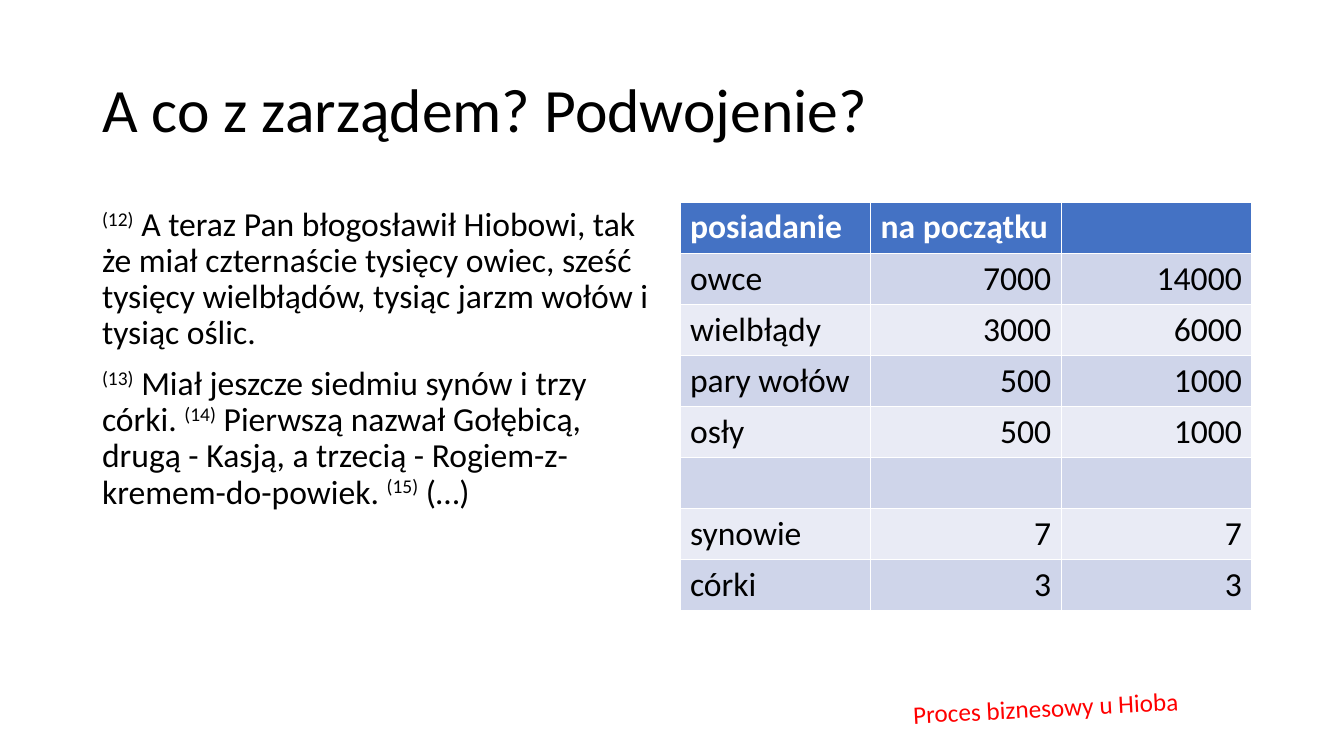
import pptx
import pptx.dml.color
import pptx.enum.text
import pptx.oxml
import pptx.oxml.ns
import pptx.util

EMU_PER_PX = 914400 / 100.8
FONT = "Calibri"
COLORS = {
    "text": "000000",
    "header_text": "FFFFFF",
    "header": "4472C4",
    "odd_row": "CFD5EA",
    "even_row": "E9EBF5",
    "label": "FF0000",
}
ALIGN = pptx.enum.text.PP_ALIGN

VERSES = [
    [("(12)", " A teraz Pan błogosławił Hiobowi, tak że miał czternaście tysięcy owiec, "
              "sześć tysięcy wielbłądów, tysiąc jarzm wołów i tysiąc oślic.")],
    [("(13)", " Miał jeszcze siedmiu synów i trzy córki. "),
     ("(14)", " Pierwszą nazwał Gołębicą, drugą - Kasją, a trzecią - Rogiem-z-kremem-do-powiek. "),
     ("(15)", " (…)")],
]
POSSESSIONS = [
    ("posiadanie", "na początku", ""),
    ("owce", "7000", "14000"),
    ("wielbłądy", "3000", "6000"),
    ("pary wołów", "500", "1000"),
    ("osły", "500", "1000"),
    ("", "", ""),
    ("synowie", "7", "7"),
    ("córki", "3", "3"),
]


def px(n):
    return pptx.util.Emu(round(n * EMU_PER_PX))


def rgb(name):
    return pptx.dml.color.RGBColor.from_string(COLORS[name])


def place(sp, box):
    sp.left, sp.top, sp.width, sp.height = map(px, box)


def format_runs(p, size, color, bold=False):
    for r in p.runs:
        r.font.name = FONT
        r.font.size = pptx.util.Pt(size)
        r.font.bold = bold
        r.font.color.rgb = rgb(color)


def fill_title(sp, box, text):
    place(sp, box)
    tf = sp.text_frame
    tf.text = text
    tf.auto_size = pptx.enum.text.MSO_AUTO_SIZE.NONE
    tf.vertical_anchor = pptx.enum.text.MSO_ANCHOR.MIDDLE
    p = tf.paragraphs[0]
    p.alignment = ALIGN.LEFT
    p.line_spacing = 0.9
    format_runs(p, 44, "text")


def fill_verses(sp, box, paragraphs):
    """Fill the body with unbulleted paragraphs of (superscript number, text) pairs."""
    place(sp, box)
    tf = sp.text_frame
    tf.auto_size = pptx.enum.text.MSO_AUTO_SIZE.NONE
    for i, verses in enumerate(paragraphs):
        p = tf.add_paragraph() if i else tf.paragraphs[0]
        p.line_spacing = 0.9
        p.space_before = pptx.util.Pt(10)
        pPr = p._p.get_or_add_pPr()
        pPr.set("marL", "0")
        pPr.set("indent", "0")
        pPr.append(pptx.oxml.parse_xml(f'<a:buNone {pptx.oxml.ns.nsdecls("a")}/>'))
        for number, text in verses:
            r = p.add_run()
            r.text = number
            r._r.get_or_add_rPr().set("baseline", "30000")
            p.add_run().text = text
        format_runs(p, 24, "text")


def add_possessions(slide, box, rows):
    """Add the table; its default style supplies the white borders."""
    table = slide.shapes.add_table(len(rows), len(rows[0]), *map(px, box)).table
    for i, values in enumerate(rows):
        header = i == 0
        fill = "header" if header else "odd_row" if i % 2 else "even_row"
        for j, value in enumerate(values):
            cell = table.cell(i, j)
            cell.fill.solid()
            cell.fill.fore_color.rgb = rgb(fill)
            cell.text_frame.text = value
            p = cell.text_frame.paragraphs[0]
            p.alignment = ALIGN.RIGHT if j and not header else ALIGN.LEFT
            format_runs(p, 24, "header_text" if header else "text", header)


def add_label(slide, box, text, rotation):
    sp = slide.shapes.add_textbox(*map(px, box))
    sp.rotation = rotation
    tf = sp.text_frame
    tf.word_wrap = True
    tf.auto_size = pptx.enum.text.MSO_AUTO_SIZE.SHAPE_TO_FIT_TEXT
    tf.text = text
    p = tf.paragraphs[0]
    p.alignment = ALIGN.CENTER
    format_runs(p, 18, "label")


def main():
    prs = pptx.Presentation()
    prs.slide_width, prs.slide_height = px(1344), px(756)
    slide = prs.slides.add_slide(prs.slide_layouts[1])
    title, body = slide.placeholders
    fill_title(title, (92, 40, 1159, 146), "A co z zarządem? Podwojenie?")
    fill_verses(body, (92, 202, 572, 480), VERSES)
    add_possessions(slide, (680, 202, 572, 51 * len(POSSESSIONS)), POSSESSIONS)
    add_label(slide, (866, 687, 365, 40), "Proces biznesowy u Hioba ", 357.1)
    prs.save("out.pptx")


if __name__ == "__main__":
    main()
